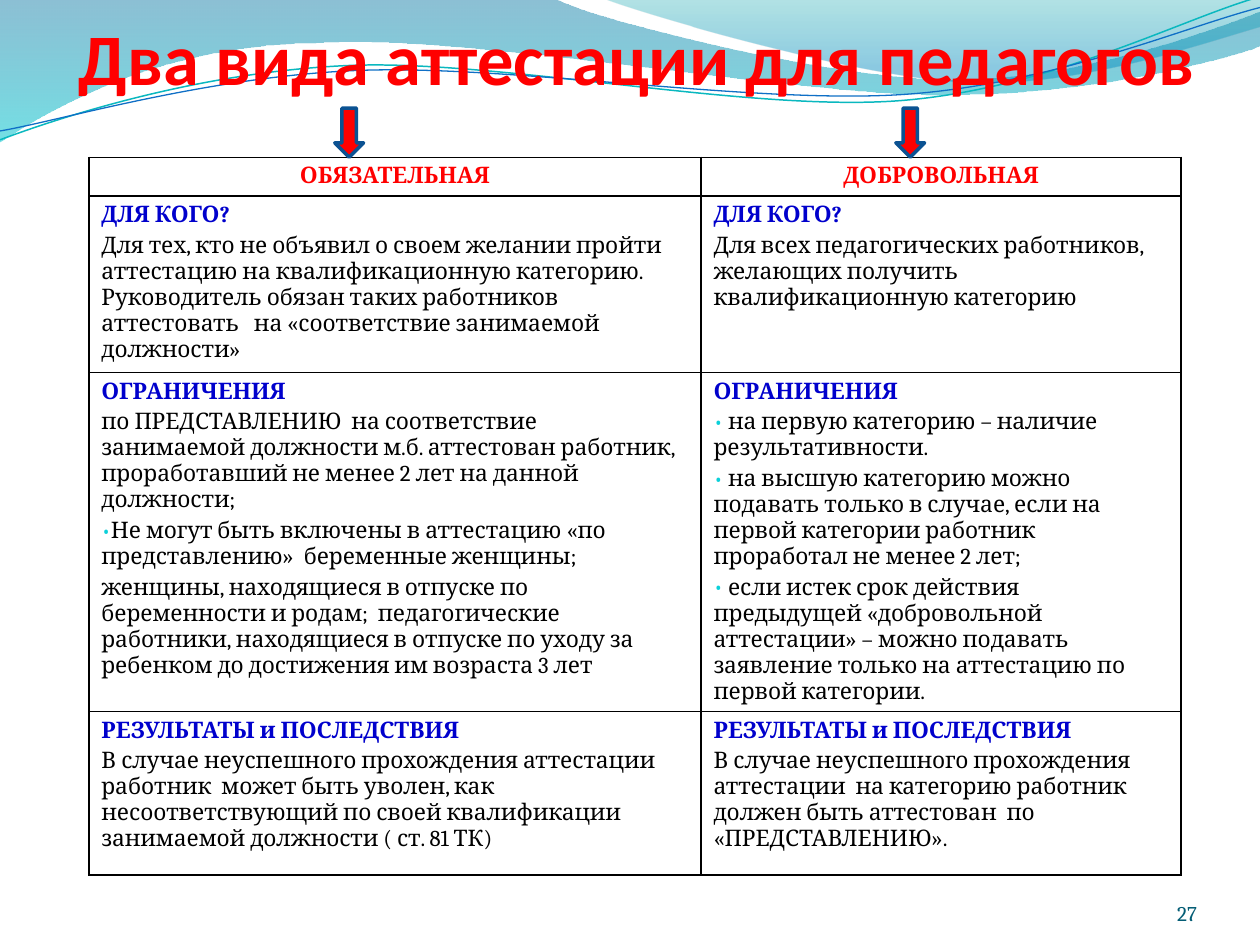
from math import cos, radians, sin
from lxml.etree import SubElement as Sub
from pptx import Presentation
from pptx.dml.color import RGBColor as Rgb
from pptx.enum.shapes import MSO_SHAPE as Shape
from pptx.enum.text import MSO_ANCHOR as Anchor, MSO_AUTO_SIZE as Auto, PP_ALIGN as Align
from pptx.oxml.ns import qn
from pptx.util import Cm, Pt

RED, BLUE, BLACK = "FF0000", "0000CC", "000000"
INCH = 2.54
TILT = 2.7

BANDS = [
    ([(0, -0.01), (4.4, -0.01),
      (4.76, 0.17, 6.64, 0.63, 7.58, 0.63), (8.53, 0.63, 9.58, 0.26, 10, 0.09),
      (10.01, 0.36),
      (9.83, 0.44, 8.7, 0.76, 7.46, 0.75), (6.22, 0.75, 3.82, 0.28, 2.57, 0.34),
      (1.29, 0.35, 0.46, 0.83, -0.01, 1.13), (0, -0.01)],
     [(0, "0074A1", 45), (1, "00C6CF", 55)]),
    ([(4.79, -0.01),
      (5.09, 0.11, 6.82, 0.62, 7.69, 0.65), (8.56, 0.69, 9.61, 0.32, 10, 0.21),
      (10, 0), (4.79, -0.01)],
     [(0, "00A1A9", 30), (0.8, "008BBF", 45)]),
]
WAVES = [
    ([(0, 1.11), (0.48, 0.93, 1.58, 0.57, 2.77, 0.52),
      (3.95, 0.47, 5.93, 0.89, 7.13, 0.8), (8.33, 0.71, 9.38, 0.15, 9.98, -0.02)],
     "0AB8BF", 0.85, (4.99, 0.57)),
    ([(0, 1.04), (0.47, 0.96, 1.64, 0.61, 2.83, 0.56),
      (4.03, 0.51, 5.97, 0.83, 7.17, 0.75), (8.36, 0.67, 9.41, 0.21, 10, 0.06)],
     "0F6FC6", 0.75, (5, 0.58)),
]
HEADS = ["ОБЯЗАТЕЛЬНАЯ", "ДОБРОВОЛЬНАЯ"]
TOPICS = [
    ("ДЛЯ КОГО?",
     ["Для тех, кто не объявил о своем желании пройти аттестацию на квалификационную категорию. "
      "Руководитель обязан таких работников  аттестовать   на «соответствие занимаемой должности»"],
     ["Для всех педагогических работников, желающих получить квалификационную категорию"]),
    ("ОГРАНИЧЕНИЯ",
     ["по ПРЕДСТАВЛЕНИЮ  на соответствие  занимаемой должности м.б. аттестован работник, "
      "проработавший не менее 2 лет на данной должности;",
      "•Не могут быть включены в аттестацию «по представлению»  беременные женщины;",
      "женщины, находящиеся в отпуске по беременности и родам;  педагогические работники, "
      "находящиеся в отпуске по уходу за ребенком до достижения им возраста 3 лет"],
     ["• на первую категорию – наличие результативности.",
      "• на высшую категорию можно подавать только в случае, если на первой категории работник  "
      "проработал не менее 2 лет;",
      "• если истек срок действия предыдущей «добровольной аттестации» – можно подавать "
      "заявление только на аттестацию по первой категории."]),
    ("РЕЗУЛЬТАТЫ и ПОСЛЕДСТВИЯ",
     ["В случае неуспешного прохождения аттестации работник  может быть уволен, как "
      "несоответствующий по своей квалификации занимаемой должности ( ст. 81 ТК)"],
     ["В случае неуспешного прохождения аттестации  на категорию работник должен быть "
      "аттестован  по «ПРЕДСТАВЛЕНИЮ»."]),
]


def tint(text):
    return Rgb.from_string(text)


def write(para, text, size=13, font="Cambria", color=BLACK, bold=False,
          align=Align.LEFT, gap=0):
    para.alignment = align
    props = para._p.get_or_add_pPr()
    Sub(Sub(props, qn("a:spcBef")), qn("a:spcPct"), val=str(gap * 1000))
    if text.startswith("•"):
        mark(props)
        text = text[1:]
    run = para.add_run()
    run.text = text
    face = run.font
    face.size, face.name, face.bold = Pt(size), font, bold
    face.color.rgb = tint(color)


def mark(props):
    Sub(Sub(props, qn("a:buClr")), qn("a:srgbClr"), val="0BD0D9")
    Sub(props, qn("a:buSzPct"), val="95000")
    Sub(props, qn("a:buFont"), typeface="Cambria")
    Sub(props, qn("a:buChar"), char="•")


def place(shape, left, top, width, height):
    shape.left, shape.top = Cm(left), Cm(top)
    shape.width, shape.height = Cm(width), Cm(height)


def frame(shape, top=0):
    box = shape.text_frame
    box.word_wrap, box.auto_size = True, Auto.NONE
    box.vertical_anchor = Anchor.BOTTOM
    box.margin_left = box.margin_right = box.margin_bottom = 0
    box.margin_top = Cm(top)
    return box.paragraphs[0]


def pairs(step):
    return list(zip(step[::2], step[1::2]))


def turn(path, mid):
    c, s = cos(radians(TILT)), sin(radians(TILT))
    return [[v for x, y in pairs(step)
             for v in (mid[0] + (x - mid[0]) * c - (y - mid[1]) * s,
                       mid[1] + (x - mid[0]) * s + (y - mid[1]) * c)]
            for step in path]


def outline(slide, path, close):
    steps = [[(Cm(x * INCH), Cm(y * INCH)) for x, y in pairs(step)] for step in path]
    pen = slide.shapes.build_freeform(*steps[0][0], scale=1.0)
    pen.add_line_segments([step[-1] for step in steps[1:]], close=close)
    shape = pen.convert_to_shape()
    shape.shadow.inherit = False
    for node, step in zip(list(shape.element.iter(qn("a:lnTo"))), steps[1:]):
        if len(step) == 3:
            bend(node, step, shape)
    return shape


def bend(node, step, shape):
    curve = node.makeelement(qn("a:cubicBezTo"))
    for x, y in step:
        Sub(curve, qn("a:pt"), x=str(x - shape.left), y=str(y - shape.top))
    node.getparent().replace(node, curve)


def band(slide, path, stops):
    shape = outline(slide, path, True)
    shape.line.fill.background()
    shape.fill.gradient()
    shape.fill.gradient_angle = 270
    for stop, (spot, color, alpha) in zip(shape.fill.gradient_stops, stops):
        stop.position = spot
        stop.color.rgb = tint(color)
        node = stop._gs.find(qn("a:srgbClr"))
        Sub(node, qn("a:alpha"), val=str(alpha * 1000))


def wave(slide, path, color, width, mid):
    shape = outline(slide, turn(path, mid), False)
    shape.rotation = 360 - TILT
    shape.fill.background()
    shape.line.color.rgb = tint(color)
    shape.line.width = Pt(width)


def arrow(slide, left):
    shape = slide.shapes.add_shape(Shape.DOWN_ARROW, Cm(left), Cm(2.18), Cm(0.58), Cm(0.99))
    shape.shadow.inherit = False
    shape.fill.solid()
    shape.fill.fore_color.rgb = tint(RED)
    shape.line.color.rgb = tint("0B5292")
    shape.line.width = Pt(2)


def border(cell):
    props = cell._tc.get_or_add_tcPr()
    for side in ("lnL", "lnR", "lnT", "lnB"):
        line = Sub(props, qn("a:" + side), w=str(Pt(1)))
        Sub(Sub(line, qn("a:solidFill")), qn("a:srgbClr"), val=BLACK)


def fill(cell, head, lines=(), **form):
    border(cell)
    cell.fill.background()
    box = cell.text_frame
    write(box.paragraphs[0], head, bold=True, gap=20, **form)
    for line in lines:
        write(box.add_paragraph(), line, gap=20)


def grid(slide):
    table = slide.shapes.add_table(4, 2, Cm(1.79), Cm(3.17), Cm(22.02), Cm(13.19)).table
    table.first_row = table.horz_banding = False
    for col, width in zip(table.columns, (12.34, 9.68)):
        col.width = Cm(width)
    for row, height in zip(table.rows, (0.74, 3.56, 5.59, 3.3)):
        row.height = Cm(height)
    for c, head in enumerate(HEADS):
        fill(table.cell(0, c), head, color=RED, align=Align.CENTER)
    for r, (topic, *sides) in enumerate(TOPICS, 1):
        for c, lines in enumerate(sides):
            fill(table.cell(r, c), topic, lines, color=BLUE)


def main():
    deck = Presentation()
    deck.slide_width, deck.slide_height = Cm(25.4), Cm(19.05)
    slide = deck.slides.add_slide(deck.slide_layouts[5])
    for path, stops in BANDS:
        band(slide, path, stops)
    for path, color, width, mid in WAVES:
        wave(slide, path, color, width, mid)
    title = slide.shapes.title
    title.element.getparent().append(title.element)
    place(title, 1.59, 0.59, 22.86, 1.42)
    write(frame(title, top=0.13), "Два вида аттестации для педагогов",
          size=41.4, font="Calibri", color=RED, bold=True)
    grid(slide)
    for left in (6.75, 18.06):
        arrow(slide, left)
    page = slide.shapes.add_textbox(Cm(22.02), Cm(17.65), Cm(2.11), Cm(1.02))
    write(frame(page), "27", size=12, color="045D75", align=Align.RIGHT)
    deck.save("out.pptx")


if __name__ == "__main__":
    main()
